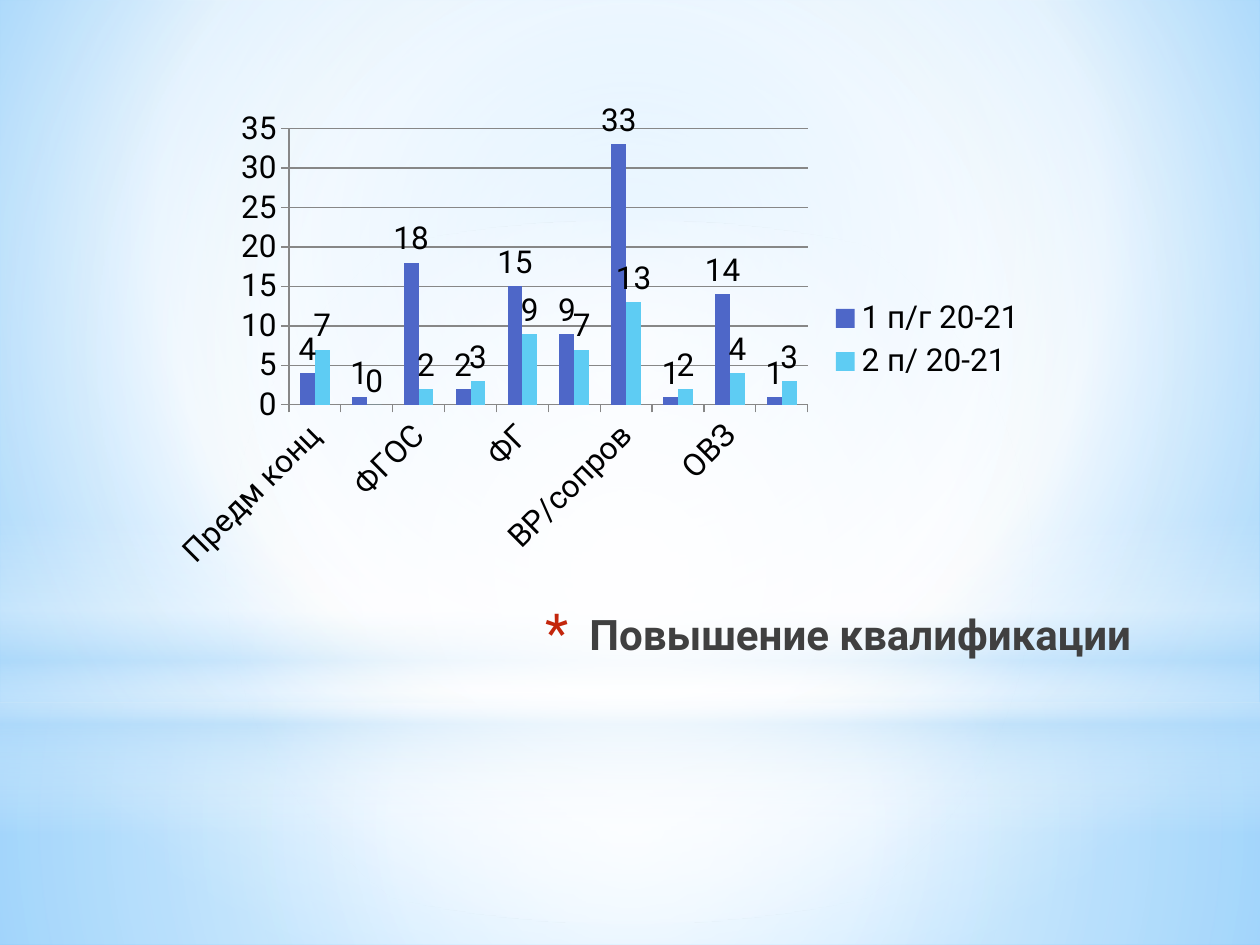
from lxml.etree import SubElement
from pptx import Presentation
from pptx.chart.data import CategoryChartData
from pptx.dml.color import RGBColor
from pptx.enum.chart import (XL_CHART_TYPE, XL_LABEL_POSITION,
                             XL_LEGEND_POSITION, XL_TICK_MARK)
from pptx.enum.shapes import MSO_SHAPE
from pptx.enum.text import MSO_ANCHOR, MSO_AUTO_SIZE, PP_ALIGN
from pptx.oxml.ns import qn
from pptx.util import Cm, Pt

FONT = "Roboto"
TITLE = "Повышение квалификации"
CATEGORIES = ["Предм конц", "ЕГЭ", "ФГОС", "СОО", "ФГ",
              "Обр.техн", "ВР/сопров", "ОД", "ОВЗ", "МР"]
SERIES = [
    ("1 п/г 20-21", "4E67C8", [4, 1, 18, 2, 15, 9, 33, 1, 14, 1]),
    ("2 п/ 20-21", "5ECCF3", [7, 0, 2, 3, 9, 7, 13, 2, 4, 3]),
    ("Ряд 3", "A7EA52", []),
]

# Gradient stops: position %, colour, opacity %
CENTRE = (50, 50, 50, 50)
BACKGROUND = [(0, "9ED5FF", 100), (60, "FFFFFF", 100), (100, "5BB9FF", 100)]
TITLE_STOPS = [(0, "000000", 100), (40, "404040", 100), (100, "212745", 65)]
# Shape, top and height in cm, stops, focus (None = vertical gradient)
GLOWS = [
    (MSO_SHAPE.RECTANGLE, 14.17, 4.88,
     [(0, "FFFFFF", 91), (37, "FFFFFF", 76), (100, "B4DCFA", 79)], CENTRE),
    (MSO_SHAPE.RECTANGLE, 0, 14.17,
     [(0, "FFFFFF", 89), (48, "FFFFFF", 62), (100, "B4DCFA", 79)], CENTRE),
    (MSO_SHAPE.RECTANGLE, 10.46, 6.35,
     [(0, "FFFFFF", 0), (29, "FFFFFF", 30), (45, "B4DCFA", 40),
      (55, "FFFFFF", 26), (65, "B4DCFA", 60), (100, "FFFFFF", 0)], None),
    (MSO_SHAPE.OVAL, 4.45, 14.17,
     [(0, "FFFFFF", 100), (56, "FFFFFF", 0)], CENTRE),
]


def rgb(value):
    return RGBColor.from_string(value)


def set_gradient(props, stops, focus=None):
    """Replace the solid fill in props by a circular or vertical gradient."""
    solid = props.find(qn("a:solidFill"))
    grad = SubElement(props, qn("a:gradFill"), rotWithShape="1")
    props.replace(solid, grad)
    stop_list = SubElement(grad, qn("a:gsLst"))
    for position, colour, opacity in stops:
        gs = SubElement(stop_list, qn("a:gs"), pos=str(position * 1000))
        clr = SubElement(gs, qn("a:srgbClr"), val=colour)
        if opacity < 100:
            SubElement(clr, qn("a:alpha"), val=str(opacity * 1000))
    if focus:
        circle = SubElement(grad, qn("a:path"), path="circle")
        sides = {side: str(v * 1000) for side, v in zip("ltrb", focus)}
        SubElement(circle, qn("a:fillToRect"), **sides)
    else:
        SubElement(grad, qn("a:lin"), ang="5400000", scaled="0")


def add_background(s, width):
    s.background.fill.solid()
    set_gradient(s.element.xpath(".//p:bgPr")[0], BACKGROUND, (20, 10, 20, 60))
    for kind, top, height, stops, focus in GLOWS:
        sp = s.shapes.add_shape(kind, 0, Cm(top), width, Cm(height))
        sp.shadow.inherit = False
        sp.line.fill.background()
        sp.fill.solid()
        set_gradient(sp.element.spPr, stops, focus)


def format_title(title):
    title.element.getparent().append(title.element)  # in front of the glows
    title.left, title.top = Cm(4.98), Cm(12.14)
    title.width, title.height = Cm(18.08), Cm(3.18)
    tf = title.text_frame
    tf.word_wrap = True
    tf.auto_size = MSO_AUTO_SIZE.NONE
    tf.vertical_anchor = MSO_ANCHOR.TOP
    p = tf.paragraphs[0]
    p.alignment = PP_ALIGN.RIGHT
    pPr = p._p.get_or_add_pPr()
    pPr.set("marL", str(Cm(0.89)))
    pPr.set("indent", str(-Cm(0.89)))
    SubElement(SubElement(pPr, qn("a:buClr")), qn("a:srgbClr"), val="C3260C")
    SubElement(pPr, qn("a:buSzPct"), val="128000")
    SubElement(pPr, qn("a:buFont"), typeface=FONT)
    SubElement(pPr, qn("a:buChar"), char="*")
    r = p.add_run()
    r.text = TITLE
    r.font.name, r.font.size, r.font.bold = FONT, Pt(24), True
    r.font.color.rgb = rgb("404040")
    set_gradient(r.font._element, TITLE_STOPS)


def add_course_chart(s):
    data = CategoryChartData()
    data.categories = CATEGORIES
    for name, _, values in SERIES:
        data.add_series(name, values)
    chart = s.shapes.add_chart(XL_CHART_TYPE.COLUMN_CLUSTERED, Cm(3.18),
                               Cm(2.03), Cm(17.78), Cm(9.65), data).chart
    chart.has_title = False
    chart.font.name, chart.font.size = FONT, Pt(18)
    chart.font.color.rgb = rgb("000000")
    chart.has_legend = True
    chart.legend.position = XL_LEGEND_POSITION.RIGHT
    chart.legend.include_in_layout = False

    value_axis = chart.value_axis
    value_axis.has_major_gridlines = True
    value_axis.minimum_scale, value_axis.maximum_scale = 0, 35
    value_axis.major_unit = 5
    for axis in (chart.category_axis, value_axis):
        axis.major_tick_mark = XL_TICK_MARK.OUTSIDE

    plot = chart.plots[0]
    plot.gap_width = 150
    plot.vary_by_categories = False
    for series, (_, colour, values) in zip(plot.series, SERIES):
        series.format.fill.solid()
        series.format.fill.fore_color.rgb = rgb(colour)
        if values:
            labels = series.data_labels
            labels.show_value = True
            labels.position = XL_LABEL_POSITION.OUTSIDE_END
        else:  # an empty series takes no room beside the others
            ser = series._element
            ser.remove(ser.find(qn("c:val")))


def main():
    prs = Presentation()
    prs.slide_width, prs.slide_height = Cm(25.4), Cm(19.05)
    s = prs.slides.add_slide(prs.slide_layouts[5])
    add_background(s, prs.slide_width)
    format_title(s.shapes.title)
    add_course_chart(s)
    prs.save("out.pptx")


if __name__ == "__main__":
    main()
